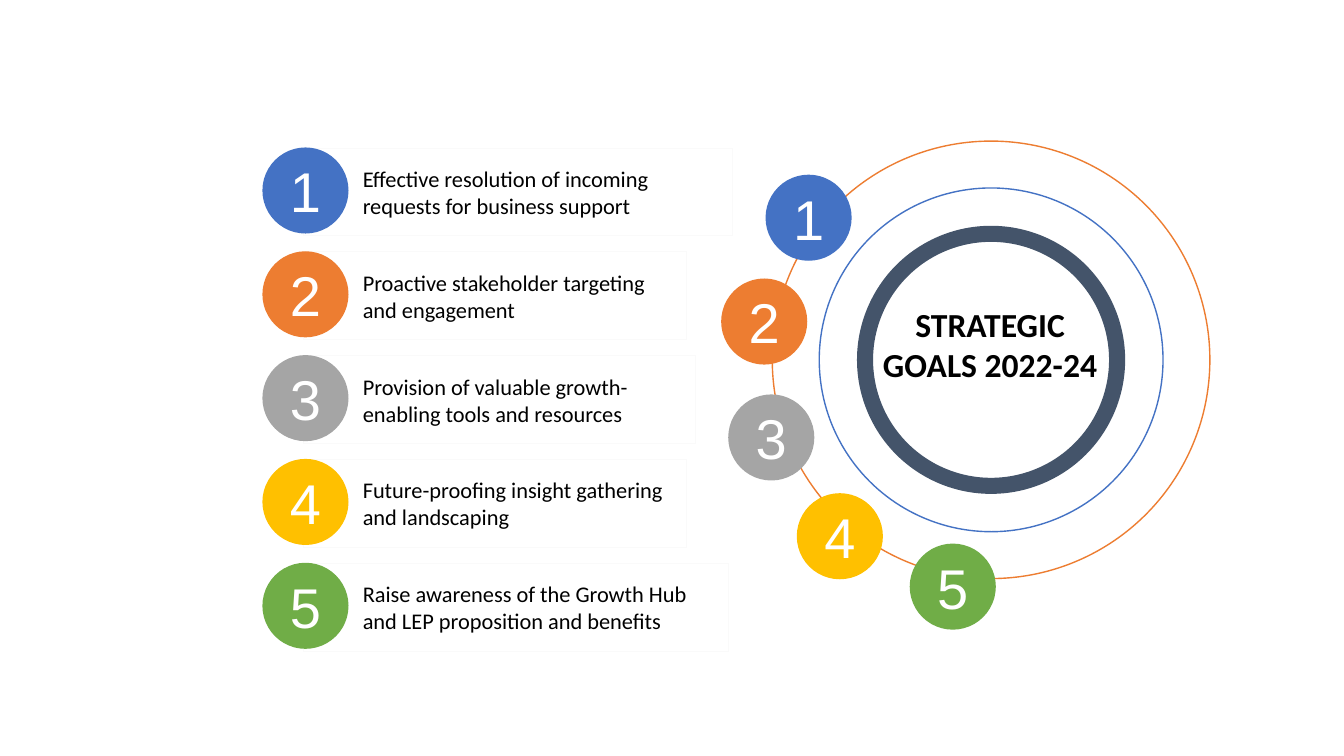
from pptx import Presentation
from pptx.dml.color import RGBColor
from pptx.enum import shapes, text
from pptx.util import Inches, Pt

GOALS = [
    ("4472C4", 4.26, "Effective resolution of incoming requests for business support"),
    ("ED7D31", 3.8, "Proactive stakeholder targeting and engagement"),
    ("A5A5A5", 3.89, "Provision of valuable growth-enabling tools and resources"),
    ("FFC000", 3.8, "Future-proofing insight gathering and landscaping"),
    ("70AD47", 4.22, "Raise awareness of the Growth Hub and LEP proposition and benefits"),
]
BADGE = 0.84
ORBIT = [(-0.06, 0.34), (-0.5, 1.37), (-0.43, 2.52), (0.25, 3.5), (1.37, 4.0)]


def rgb(value):
    """Return the colour for a hex string."""
    return RGBColor.from_string(value)


def add_shape(slide, kind, box, fill=None, line=None, weight=1):
    """Add a flat preset shape in a box given in inches."""
    sp = slide.shapes.add_shape(kind, *map(Inches, box))
    sp.shadow.inherit = False
    if fill:
        sp.fill.solid()
        sp.fill.fore_color.rgb = rgb(fill)
    else:
        sp.fill.background()
    if line:
        sp.line.color.rgb = rgb(line)
        sp.line.width = Pt(weight)
    else:
        sp.line.fill.background()
    return sp


def set_text(sp, content, size, font, color, align, bold=False):
    """Write one paragraph into a shape and format it."""
    tf = sp.text_frame
    tf.text = content
    tf.word_wrap = True
    tf.vertical_anchor = text.MSO_ANCHOR.MIDDLE
    p = tf.paragraphs[0]
    p.alignment = align
    r = p.runs[0]
    r.font.size, r.font.name, r.font.bold = Pt(size), font, bold
    r.font.color.rgb = rgb(color)
    return p


def add_badge(slide, left, top, number, color):
    """Add a numbered circle."""
    sp = add_shape(slide, shapes.MSO_SHAPE.OVAL, (left, top, BADGE, BADGE), color, color)
    set_text(sp, str(number), 40, "Arial", "FFFFFF", text.PP_ALIGN.CENTER)


def add_goal_list(slide, left, top, pitch):
    """Add the rows of goals, each a card with its badge."""
    for i, (color, width, goal) in enumerate(GOALS):
        y = top + i * pitch
        card = add_shape(slide, shapes.MSO_SHAPE.RECTANGLE,
                         (left + 0.4, y, width, 0.87), line="FAFAFA", weight=0.75)
        p = set_text(card, goal, 16, "Calibri", "000000", text.PP_ALIGN.LEFT)
        p._p.get_or_add_pPr().set("marL", str(Inches(0.49)))
        add_badge(slide, left, y, i + 1, color)


def add_goal_wheel(slide, left, top, size):
    """Add the concentric rings, the title inside and the badges around."""
    def centred(diameter):
        """Return the box of a circle centred in the wheel."""
        gap = (size - diameter) / 2
        return left + gap, top + gap, diameter, diameter

    for diameter, color in ((3.41, "4472C4"), (size, "ED7D31")):
        add_shape(slide, shapes.MSO_SHAPE.OVAL, centred(diameter), line=color)
    ring = add_shape(slide, shapes.MSO_SHAPE.DONUT, centred(2.66), fill="44546A")
    ring.adjustments[0] = 0.06

    title = slide.shapes.title
    title.left, title.top = Inches(left + 0.94), Inches(top + 1.56)
    title.width, title.height = Inches(2.44), Inches(0.91)
    set_text(title, "STRATEGIC GOALS 2022-24", 24, "Calibri", "000000",
             text.PP_ALIGN.CENTER, bold=True)
    title.text_frame.auto_size = text.MSO_AUTO_SIZE.NONE
    title.text_frame.vertical_anchor = text.MSO_ANCHOR.TOP

    for i, (dx, dy) in enumerate(ORBIT):
        add_badge(slide, left + dx, top + dy, i + 1, GOALS[i][0])


def main():
    """Build the slide and save it."""
    prs = Presentation()
    prs.slide_width, prs.slide_height = Inches(13.33), Inches(7.5)
    slide = prs.slides.add_slide(prs.slide_layouts[5])
    add_goal_wheel(slide, 7.66, 1.4, 4.34)
    add_goal_list(slide, 2.61, 1.47, 1.03)
    prs.save("out.pptx")


if __name__ == "__main__":
    main()
